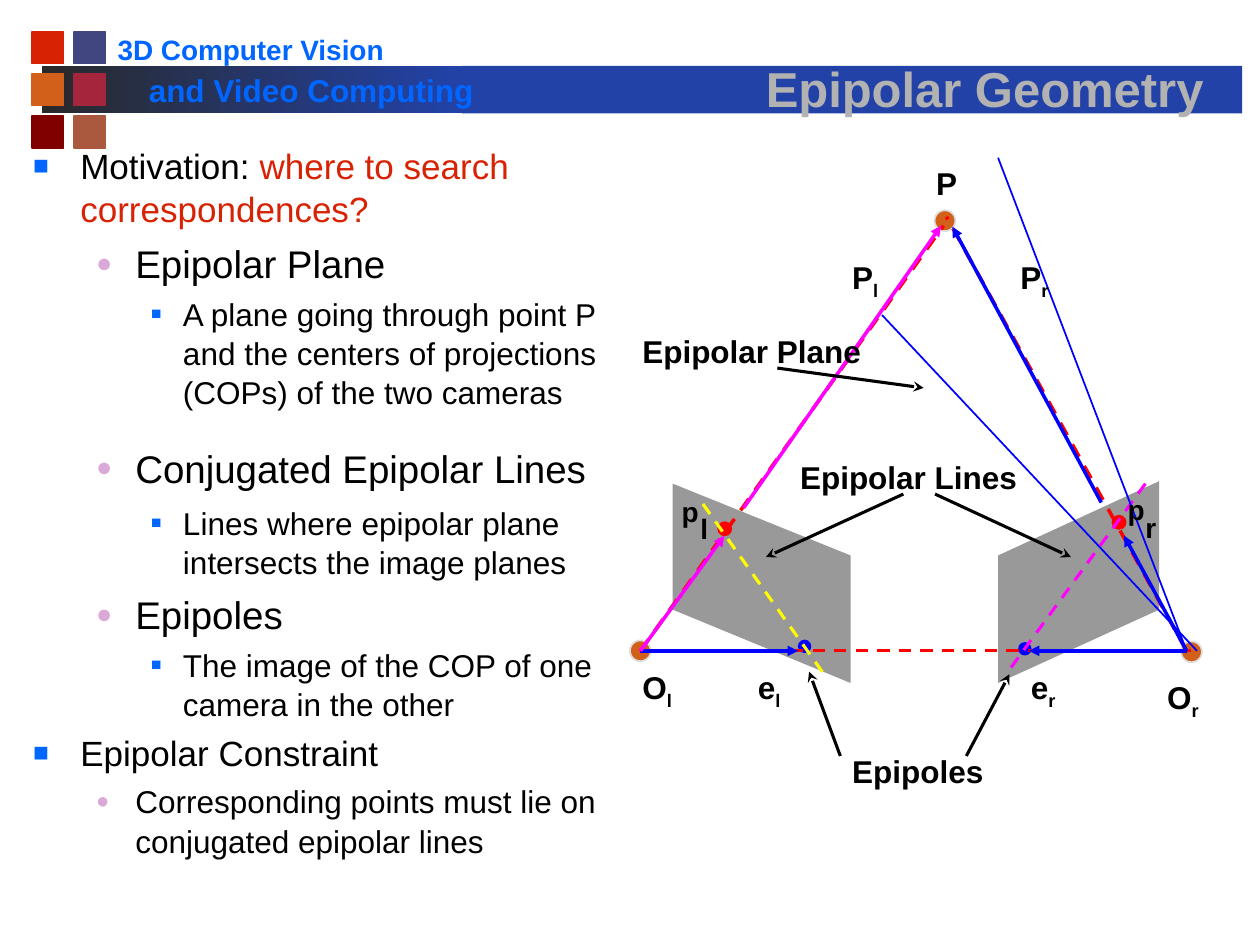
from lxml import etree
from pptx import Presentation
from pptx.dml.color import RGBColor
from pptx.enum import dml, shapes, text
from pptx.oxml import ns
from pptx.util import Cm, Pt

COLORS = {
    "black": "000000", "blue": "0000FF", "red": "FF0000", "magenta": "FF00FF",
    "yellow": "FFFF00", "gray": "999999", "silver": "B2B2B2", "pale": "DDDDDD",
    "orange": "D2601A", "scarlet": "D82204", "indigo": "424680",
    "crimson": "A5253D", "maroon": "800000", "clay": "AA583E",
    "bar": "2242A8", "charcoal": "292929", "sky": "0066FF", "pink": "DBA9D7",
}
RGB = {name: RGBColor.from_string(value) for name, value in COLORS.items()}

prs = Presentation()
prs.slide_width, prs.slide_height = Cm(25.4), Cm(19.05)
s = prs.slides.add_slide(prs.slide_layouts[5])


def add_shape(kind, left, top, width, height, color, line=None):
    sp = s.shapes.add_shape(kind, Cm(left), Cm(top), Cm(width), Cm(height))
    sp.shadow.inherit = False
    sp.fill.solid()
    sp.fill.fore_color.rgb = RGB[color]
    if line:
        sp.line.color.rgb = RGB[line]
        sp.line.width = Pt(1)
    else:
        sp.line.fill.background()
    return sp


def add_label(words, left, top, width, size=18, color="black", sub="", inset=True):
    """Add a bold one-line label with an optional subscript."""
    box = s.shapes.add_textbox(Cm(left), Cm(top), Cm(width), Cm(1.02))
    tf = box.text_frame
    tf.word_wrap = True
    if not inset:
        tf.margin_left = tf.margin_right = tf.margin_top = tf.margin_bottom = 0
    p = tf.paragraphs[0]
    p.font.name, p.font.size, p.font.bold = "Arial", Pt(size), True
    p.font.color.rgb = RGB[color]
    p.add_run().text = words
    if sub:
        r = p.add_run()
        r.text = sub
        r._r.get_or_add_rPr().set("baseline", "-25000")


# Header: bars, squares and course name
RECT, OVAL = shapes.MSO_SHAPE.RECTANGLE, shapes.MSO_SHAPE.OVAL
fade = add_shape(RECT, 0.85, 1.33, 8.47, 0.96, "bar")
fade.fill.gradient()
fade.fill.gradient_angle = 0
for stop, color, position in zip(fade.fill.gradient_stops, ("charcoal", "bar"), (0, 1)):
    stop.color.rgb = RGB[color]
    stop.position = position
add_shape(RECT, 9.31, 1.33, 15.73, 0.96, "bar")
squares = [("scarlet", "indigo"), ("orange", "crimson"), ("maroon", "clay")]
for row, pair in enumerate(squares):
    for col, color in enumerate(pair):
        add_shape(RECT, 0.64 + 0.85 * col, 0.64 + 0.85 * row, 0.64, 0.64, color, color)
add_label("3D Computer Vision", 2.12, 0.53, 6.2, 16, "sky")
add_label("and Video Computing", 2.75, 1.3, 7.2, 18, "sky")

# Title, in front of the bars
title = s.shapes.title
title._element.getparent().append(title._element)
title.left, title.top, title.width, title.height = Cm(14.4), Cm(0.79), Cm(10.9), Cm(1.7)
tf = title.text_frame
tf.vertical_anchor = text.MSO_ANCHOR.BOTTOM
p = tf.paragraphs[0]
p.alignment = text.PP_ALIGN.CENTER
r = p.add_run()
r.text = "Epipolar Geometry"
r.font.size, r.font.bold = Pt(28), True
r.font.color.rgb = RGB["silver"]
effects = etree.SubElement(r._r.get_or_add_rPr(), ns.qn("a:effectLst"))
shadow = etree.SubElement(effects, ns.qn("a:outerShdw"), dist="35921", dir="2700000")
etree.SubElement(shadow, ns.qn("a:srgbClr"), val=COLORS["black"])
r.font.name = "Arial"

# Outline: level, size, runs
outline = [
    (0, 20, [("Motivation: ", "black"), ("where to search correspondences?", "scarlet")]),
    (1, 22, [("Epipolar Plane", "black")]),
    (2, 18, [("A plane going through point P and the centers of projections "
              "(COPs) of the two cameras", "black")]),
    (1, 22, [("Conjugated Epipolar Lines", "black")]),
    (2, 18, [("Lines where epipolar plane intersects the image planes", "black")]),
    (1, 22, [("Epipoles", "black")]),
    (2, 18, [("The image of the COP of one camera in the other", "black")]),
    (0, 20, [("Epipolar Constraint", "black")]),
    (1, 18, [("Corresponding points must lie on conjugated epipolar lines", "black")]),
]
# Left margin, hanging indent, bullet, bullet color, bullet percent
levels = [(0.95, 0.95, "■", "sky", 75), (2.06, 0.79, "●", "pink", 70),
          (3.02, 0.64, "■", "sky", 55)]
tf = s.shapes.add_textbox(Cm(0.42), Cm(2.75), Cm(11.95), Cm(15.45)).text_frame
tf.word_wrap = True
for i, (level, size, runs) in enumerate(outline):
    p = tf.add_paragraph() if i else tf.paragraphs[0]
    p.level = level
    p.line_spacing = 1.04
    p.space_before = Pt(0.22 * size if i else 0)
    if runs[0][0].startswith("Conjugated"):
        p.space_before, p.space_after = Pt(18), Pt(2.5)
    p.font.name, p.font.size = "Arial", Pt(size)
    for words, color in runs:
        r = p.add_run()
        r.text = words
        r.font.color.rgb = RGB[color]
    margin, hang, char, color, percent = levels[level]
    pPr = p._p.get_or_add_pPr()
    pPr.set("marL", str(Cm(margin)))
    pPr.set("indent", str(-Cm(hang)))
    bullet = [etree.Element(ns.qn("a:buClr")),
              etree.Element(ns.qn("a:buSzPct"), val=str(percent * 1000)),
              etree.Element(ns.qn("a:buFont"), typeface="Arial"),
              etree.Element(ns.qn("a:buChar"), char=char)]
    etree.SubElement(bullet[0], ns.qn("a:srgbClr"), val=COLORS[color])
    at = pPr.index(pPr.find(ns.qn("a:defRPr")))
    for offset, element in enumerate(bullet):
        pPr.insert(at + offset, element)

# Image planes
planes = [[(13.56, 9.75), (17.15, 11.2), (17.15, 13.77), (13.56, 12.29)],
          [(23.37, 9.7), (20.12, 11.2), (20.12, 13.77), (23.37, 12.29)]]
for corners in planes:
    points = [(Cm(x), Cm(y)) for x, y in corners]
    builder = s.shapes.build_freeform(*points[0])
    builder.add_line_segments(points[1:], close=True)
    sp = builder.convert_to_shape()
    sp.shadow.inherit = False
    sp.fill.solid()
    sp.fill.fore_color.rgb = RGB["gray"]
    sp.line.fill.background()

# Points: center, diameter, fill, outline
dots = [(14.61, 10.66, 0.3, "red", None), (22.56, 10.53, 0.3, "red", None),
        (12.91, 13.12, 0.42, "orange", "pale"), (24.02, 13.14, 0.42, "orange", "pale"),
        (19.05, 4.45, 0.42, "orange", "pale"),
        (16.22, 13.03, 0.27, "blue", None), (20.66, 13.08, 0.27, "blue", None)]
for x, y, d, color, line in dots:
    add_shape(OVAL, x - d / 2, y - d / 2, d, d, color, line)

# Rays, baseline and pointers: from, to, color, width, dashed, arrowhead
left_eye, right_eye = (12.91, 13.12), (23.92, 13.12)
lines = [
    (left_eye, (24.13, 13.12), "red", 1.75, True, None),
    (left_eye, (16.09, 13.12), "blue", 2, False, "triangle"),
    (right_eye, (20.74, 13.12), "blue", 2, False, "triangle"),
    (left_eye, (19.02, 4.55), "red", 2, True, None),
    (right_eye, (19.08, 4.37), "red", 2, True, None),
    (left_eye, (14.6, 10.8), "magenta", 2, False, "triangle"),
    ((14.99, 10.24), (18.97, 4.55), "magenta", 2, False, "triangle"),
    (right_eye, (22.66, 10.8), "blue", 2, False, "triangle"),
    ((22.2, 10.13), (19.2, 4.57), "blue", 2, False, "triangle"),
    ((14.17, 10.16), (16.61, 13.59), "yellow", 1.75, True, None),
    ((23.09, 9.75), (20.32, 13.54), "magenta", 1.75, True, None),
    ((15.67, 7.42), (18.62, 7.82), "black", 1.75, False, "stealth"),
    ((18.21, 9.96), (15.44, 11.23), "black", 1.75, False, "stealth"),
    ((18.85, 9.96), (21.59, 11.23), "black", 1.75, False, "stealth"),
    ((19.48, 15.24), (20.35, 13.59), "black", 1.75, False, "stealth"),
    ((16.94, 15.24), (16.31, 13.54), "black", 1.75, False, "stealth"),
    ((17.78, 6.35), (24.13, 13.12), "blue", 1, False, None),
    ((20.12, 3.18), right_eye, "blue", 1, False, None),
]
for start, end, color, width, dashed, head in lines:
    line = s.shapes.add_connector(shapes.MSO_CONNECTOR.STRAIGHT,
                                  *(Cm(v) for v in start + end))
    line.line.color.rgb = RGB[color]
    line.line.width = Pt(width)
    if dashed:
        line.line.dash_style = dml.MSO_LINE.DASH
    if head:
        etree.SubElement(line.line._get_or_add_ln(), ns.qn("a:tailEnd"), type=head)
    etree.SubElement(line._element.spPr, ns.qn("a:effectLst"))

# Labels
for letter, x, y in [("p", 13.74, 9.96), ("l", 14.12, 10.31),
                     ("p", 22.73, 9.93), ("r", 23.09, 10.29)]:
    add_label(letter, x, y, 0.5, 16, inset=False)
for words, sub, x, y, width in [
        ("P", "", 18.62, 3.18, 1.2), ("P", "l", 16.93, 5.08, 1.48),
        ("P", "r", 20.32, 5.08, 1.48), ("O", "l", 12.7, 13.34, 1.48),
        ("O", "r", 23.28, 13.55, 1.48), ("e", "l", 15.03, 13.34, 1.48),
        ("e", "r", 20.53, 13.34, 1.48), ("Epipolar Plane", "", 12.7, 6.56, 5.29),
        ("Epipolar Lines", "", 15.88, 9.1, 5.29), ("Epipoles", "", 16.93, 15.03, 3.81)]:
    add_label(words, x, y, width, sub=sub)

prs.save("out.pptx")
